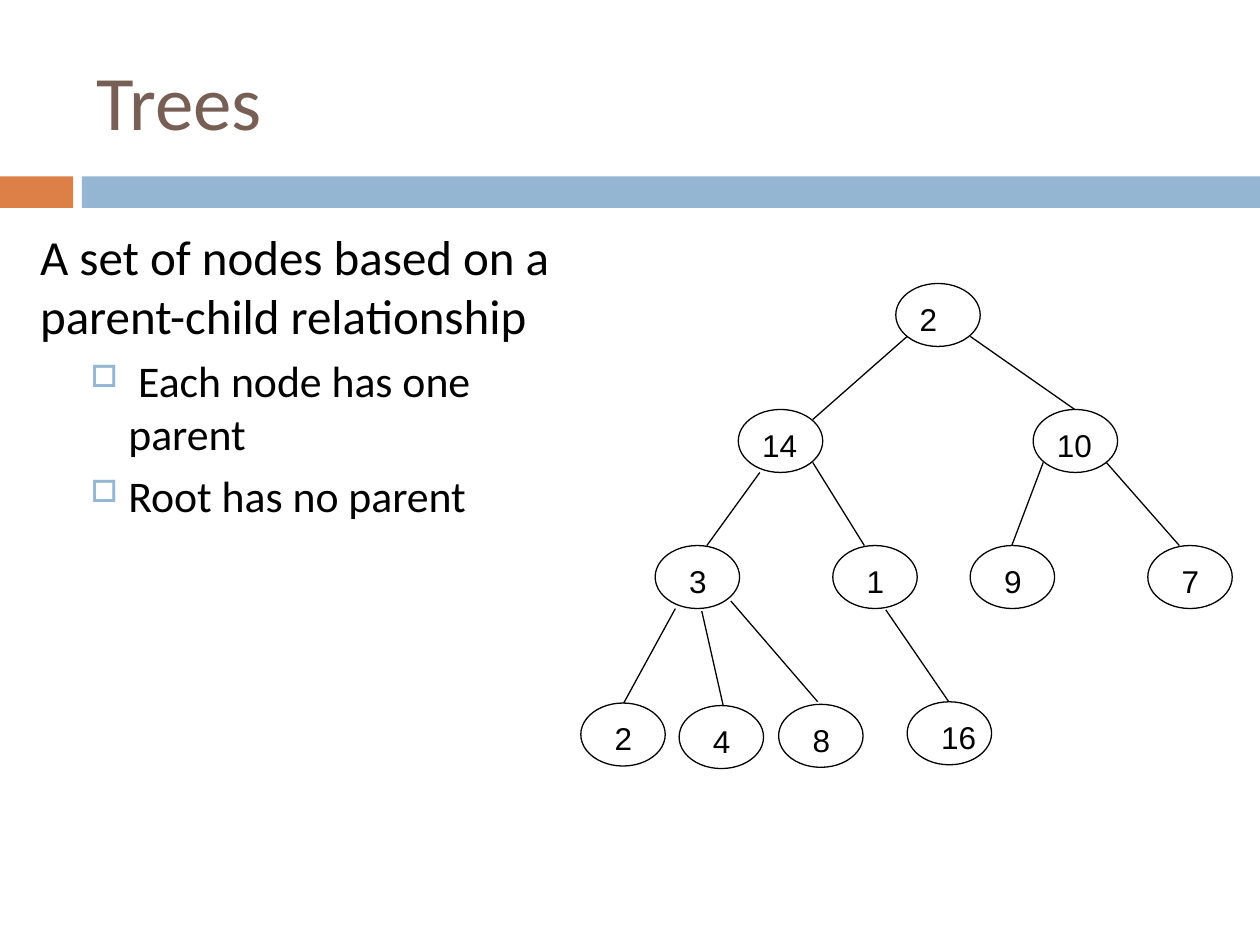
from lxml import etree
from pptx import Presentation
from pptx import util as u
from pptx.dml.color import RGBColor
from pptx.enum import shapes, text
from pptx.oxml.ns import qn

BLACK = RGBColor(0x00, 0x00, 0x00)
BROWN = RGBColor(0x77, 0x5F, 0x55)
ORANGE = RGBColor(0xDD, 0x80, 0x47)
BLUE = RGBColor(0x94, 0xB6, 0xD2)

prs = Presentation()
prs.slide_width, prs.slide_height = u.Inches(10), u.Inches(7.5)
s = prs.slides.add_slide(prs.slide_layouts[6])


def add_text(tf, content, size, font="Calibri", color=BLACK, before=0, bullet=False):
    """Add a paragraph, filling the empty first one if there is one."""
    p = tf.paragraphs[0] if not tf.text else tf.add_paragraph()
    p.space_before = u.Pt(before)
    r = p.add_run()
    r.text = content
    r.font.size, r.font.name = u.Pt(size), font
    r.font.color.rgb = color
    if bullet:
        p.level = 1
        pPr = p._p.get_or_add_pPr()
        pPr.set("marL", str(u.Inches(0.7)))
        pPr.set("indent", str(u.Inches(-0.3)))
        clr = etree.SubElement(pPr, qn("a:buClr"))
        etree.SubElement(clr, qn("a:srgbClr")).set("val", str(BLUE))
        etree.SubElement(pPr, qn("a:buSzPct")).set("val", "70000")
        etree.SubElement(pPr, qn("a:buChar")).set("char", "□")


def add_box(left, top, width, height):
    tf = s.shapes.add_textbox(*map(u.Inches, (left, top, width, height))).text_frame
    tf.word_wrap = True
    return tf


# Divider bars
for left, width, color in [(0, 0.58, ORANGE), (0.65, 9.35, BLUE)]:
    sp = s.shapes.add_shape(shapes.MSO_SHAPE.RECTANGLE, u.Inches(left),
                            u.Inches(1.4), u.Inches(width), u.Inches(0.25))
    sp.shadow.inherit = False
    sp.fill.solid()
    sp.fill.fore_color.rgb = color
    sp.line.fill.background()

# Title
tf = add_box(0.67, 0.25, 8.92, 1.08)
tf.vertical_anchor = text.MSO_ANCHOR.MIDDLE
add_text(tf, "Trees", 44, color=BROWN)

# Definition and bullets
tf = add_box(0.22, 1.75, 4.39, 4.92)
add_text(tf, "A set of nodes based on a parent-child relationship", 28, before=7)
for line in (" Each node has one parent", "Root has no parent"):
    add_text(tf, line, 25, before=5.5, bullet=True)

# Tree nodes: label, left, top, label offset from the left of the ellipse
nodes = [
    ("2", 7.11, 2.25, 0.09),
    ("14", 5.86, 3.25, 0.09), ("10", 8.2, 3.25, 0.09),
    ("3", 5.2, 4.33, 0.17), ("1", 6.61, 4.33, 0.17),
    ("9", 7.7, 4.33, 0.17), ("7", 9.11, 4.33, 0.17),
    ("2", 4.61, 5.58, 0.17), ("4", 5.39, 5.6, 0.17),
    ("8", 6.18, 5.59, 0.17), ("16", 7.2, 5.57, 0.17),
]
for label, left, top, offset in nodes:
    sp = s.shapes.add_shape(shapes.MSO_SHAPE.OVAL, u.Inches(left), u.Inches(top),
                            u.Inches(0.67), u.Inches(0.5))
    sp.shadow.inherit = False
    sp.fill.background()
    sp.line.color.rgb = BLACK
    sp.line.width = u.Pt(0.75)
    add_text(add_box(left + offset, top + 0.08, 0.58, 0.4), label, 18, font="Arial")

# Tree edges: parent end, child end
edges = [
    (7.2, 2.67, 6.45, 3.33), (7.7, 2.67, 8.53, 3.25),
    (6.03, 3.75, 5.61, 4.33), (6.45, 3.67, 6.86, 4.33),
    (8.28, 3.67, 8.03, 4.33), (8.78, 3.67, 9.36, 4.33),
    (5.36, 4.83, 4.95, 5.58), (5.57, 4.85, 5.74, 5.6),
    (5.8, 4.77, 6.49, 5.57), (7.03, 4.84, 7.53, 5.57),
]
for ends in edges:
    cx = s.shapes.add_connector(shapes.MSO_CONNECTOR.STRAIGHT, *map(u.Inches, ends))
    cx.line.color.rgb = BLACK
    cx.line.width = u.Pt(0.75)
    etree.SubElement(cx._element.spPr, qn("a:effectLst"))

prs.save("out.pptx")
